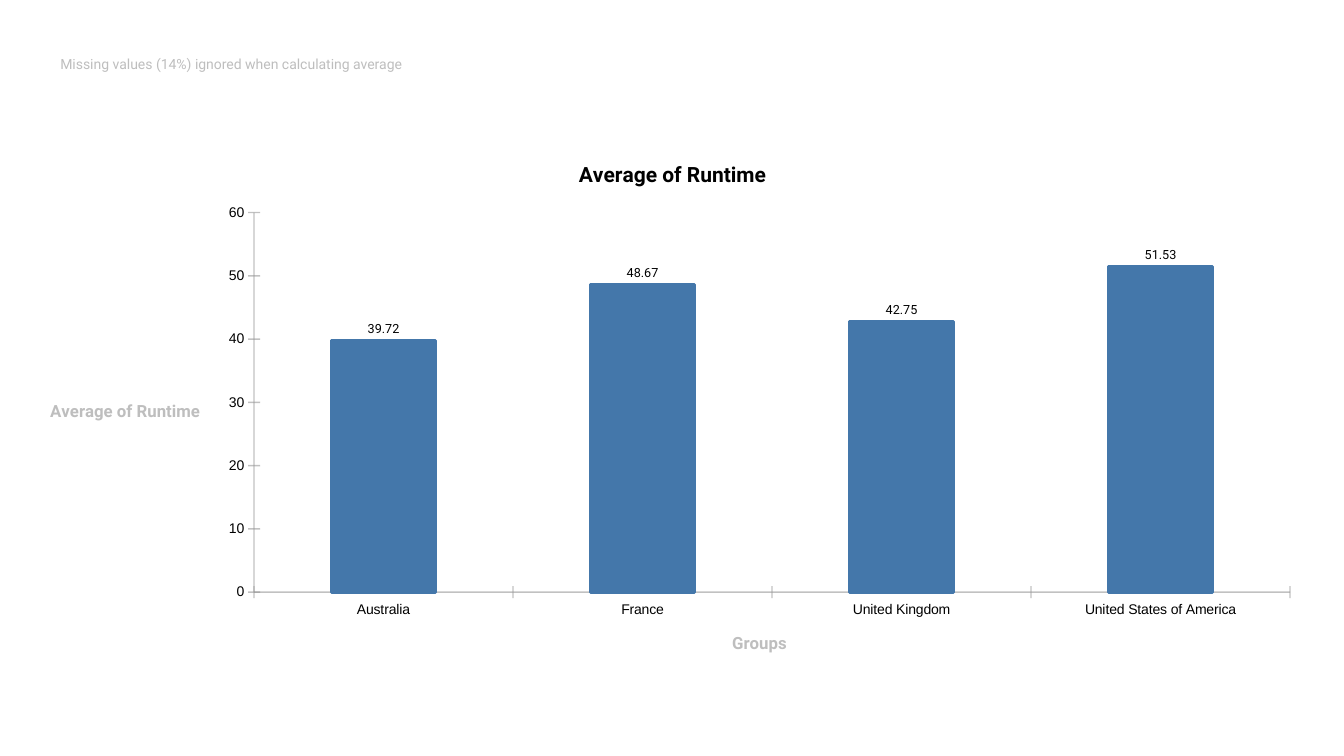
from lxml.etree import SubElement
from pptx import Presentation
from pptx.chart.data import CategoryChartData
from pptx.dml.color import RGBColor
from pptx.enum.chart import XL_CHART_TYPE as ChartType
from pptx.enum.chart import XL_LABEL_POSITION as LabelPosition
from pptx.enum.chart import XL_TICK_MARK as TickMark
from pptx.oxml.ns import qn
from pptx.util import Pt

PX = 9144  # 100 px to the inch
BLACK, GREY, AXIS_GREY, BLUE = "000000", "BEBEBE", "999999", "4477AA"

RUNTIMES = {
    "Australia": 39.72,
    "France": 48.67,
    "United Kingdom": 42.75,
    "United States of America": 51.53,
}


def color(hex_code):
    return RGBColor.from_string(hex_code)


class SlideBuilder:
    def __init__(self, slide, heading_font="Roboto", axis_font="Arial"):
        self.slide = slide
        self.heading_font = heading_font
        self.axis_font = axis_font

    def style(self, font, size, hex_code, bold=False, name=None):
        font.name = name or self.heading_font
        font.size = Pt(size)
        font.bold = bold
        font.color.rgb = color(hex_code)

    def note(self, text, left, top, width, height):
        box = self.slide.shapes.add_textbox(left * PX, top * PX, width * PX, height * PX)
        box.text_frame.word_wrap = True
        paragraph = box.text_frame.paragraphs[0]
        paragraph.text = text
        self.style(paragraph.font, 10, GREY)

    def title(self, frame, text, size, hex_code):
        frame.text = text
        self.style(frame.paragraphs[0].font, size, hex_code, bold=True)

    def axis(self, axis, text):
        self.title(axis.axis_title.text_frame, text, 12, GREY)
        # Keep the title horizontal on either axis
        axis.axis_title.element.xpath("c:tx/c:rich/a:bodyPr")[0].set("rot", "0")
        self.style(axis.tick_labels.font, 10, BLACK, name=self.axis_font)
        axis.has_major_gridlines = False
        axis.major_tick_mark = TickMark.CROSS
        axis.minor_tick_mark = TickMark.NONE
        line = axis.format.line
        line.width = Pt(1)
        line.color.rgb = color(AXIS_GREY)
        # Line at 60 % opacity
        line_color = axis.format.element.xpath("c:spPr/a:ln/a:solidFill/a:srgbClr")[0]
        SubElement(line_color, qn("a:alpha"), val="60000")

    def column_chart(self, title, category_title, averages, left, top, width, height):
        data = CategoryChartData()
        data.categories = list(averages)
        data.add_series("Series 1", list(averages.values()))
        chart = self.slide.shapes.add_chart(
            ChartType.COLUMN_CLUSTERED,
            left * PX, top * PX, width * PX, height * PX, data,
        ).chart
        self.style(chart.font, 18, BLACK)
        chart.has_legend = False
        chart.has_title = True
        self.title(chart.chart_title.text_frame, title, 15, BLACK)

        # Axes
        self.axis(chart.category_axis, category_title)
        self.axis(chart.value_axis, title)
        chart.value_axis.minimum_scale = 0
        chart.value_axis.maximum_scale = 60
        chart.value_axis.major_unit = 10

        # Columns
        plot = chart.plots[0]
        plot.gap_width = 150
        plot.vary_by_categories = False
        columns = plot.series[0].format
        columns.fill.solid()
        columns.fill.fore_color.rgb = color(BLUE)
        columns.line.color.rgb = color(BLUE)
        columns.line.width = Pt(2)

        # Value labels
        labels = plot.series[0].data_labels
        labels.show_value = True
        labels.position = LabelPosition.OUTSIDE_END
        labels.number_format = ".00"
        labels.number_format_is_linked = False
        self.style(labels.font, 9, BLACK)


def main():
    deck = Presentation()
    deck.slide_width, deck.slide_height = 1333 * PX, 750 * PX
    builder = SlideBuilder(deck.slides.add_slide(deck.slide_layouts[6]))

    builder.column_chart("Average of Runtime", "Groups", RUNTIMES, 29, 139, 1276, 531)
    builder.note("Missing values (14%) ignored when calculating average", 50, 50, 600, 100)

    deck.save("out.pptx")


if __name__ == "__main__":
    main()
